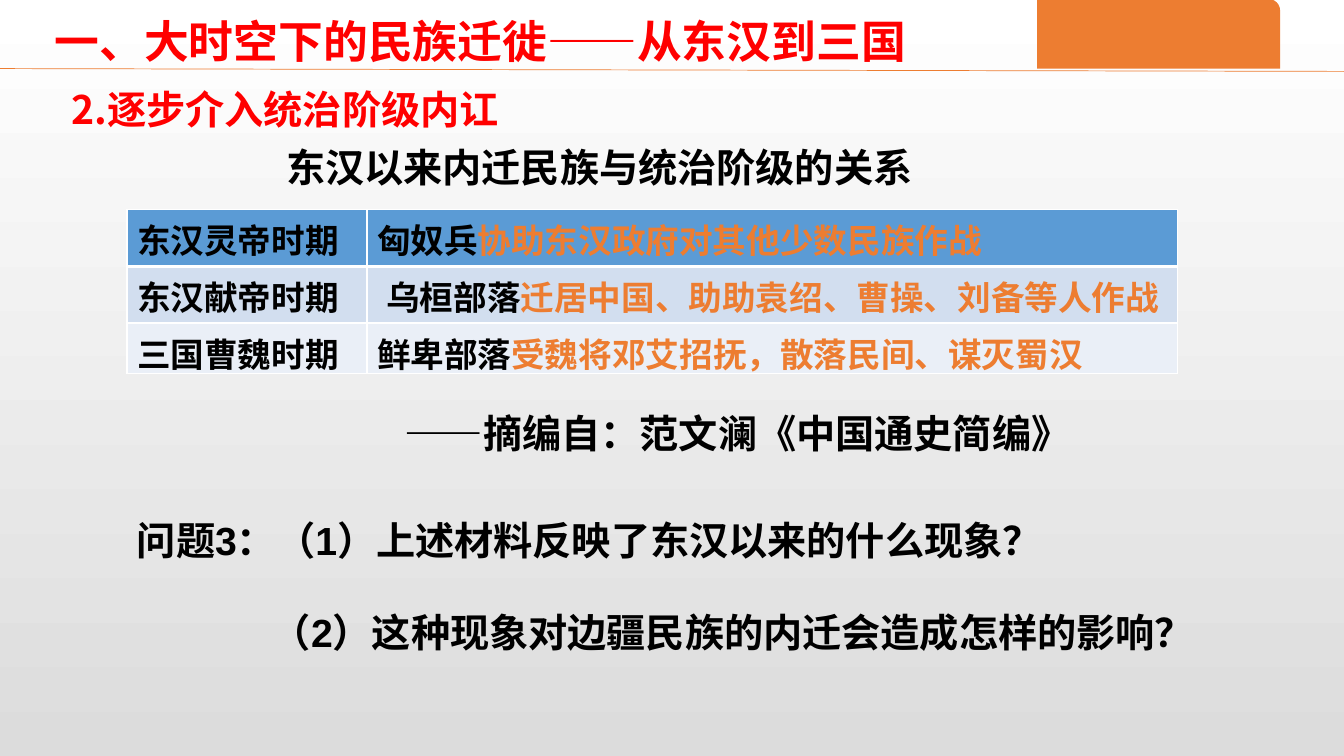
from dataclasses import dataclass

from lxml.etree import SubElement
from pptx import Presentation
from pptx.dml.color import RGBColor
from pptx.enum.shapes import MSO_CONNECTOR as CONN, MSO_SHAPE as SHAPE
from pptx.enum.text import MSO_ANCHOR as ANCHOR, MSO_AUTO_SIZE as AUTO, PP_ALIGN as ALIGN
from pptx.oxml.ns import qn
from pptx.util import Pt

SANS, CJK = "Arial", "Noto Sans CJK SC"
RED, BLACK, ORANGE, WHITE = "FF0000", "000000", "ED7D31", "FFFFFF"


@dataclass
class Label:
    text: str
    left: float
    top: float
    width: float
    height: float = 41
    size: float = 28
    color: str = BLACK
    font: str = SANS
    indent: float = 0
    wrap: bool = True


@dataclass
class Period:
    name: str
    people: str
    deed: str
    fill: str
    height: float
    bottom_line: float = 1
    indent: float = 0


TITLE = Label("一、大时空下的民族迁徙——从东汉到三国", 31.7, 6.5, 659.5, 46, 32, RED)
LABELS = [
    Label("2.逐步介入统治阶级内讧", 43.9, 57.6, 483.8, color=RED, font=CJK),
    Label("问题3：（1）上述材料反映了东汉以来的什么现象？", 90.7, 365, 779),
    Label("（2）这种现象对边疆民族的内迁会造成怎样的影响？", 171.4, 431.3, 689.8,
          indent=15.6, wrap=False),
    Label("东汉以来内迁民族与统治阶级的关系", 197.3, 98.6, 537.1),
    Label("——摘编自：范文澜《中国通史简编》", 282.2, 288.7, 530.6),
]
PERIODS = [
    Period("东汉灵帝时期", "匈奴兵", "协助东汉政府对其他少数民族作战", "5B9BD5", 40.5, 3),
    Period("东汉献帝时期", "乌桓部落", "迁居中国、助助袁绍、曹操、刘备等人作战", "D2DEEF", 40.5,
           indent=6.7),
    Period("三国曹魏时期", "鲜卑部落", "受魏将邓艾招抚，散落民间、谋灭蜀汉", "EAEFF7", 36),
]


def rgb(value: str) -> RGBColor:
    return RGBColor.from_string(value)


def add_run(p, text: str, size: float, color: str, font: str = SANS) -> None:
    r = p.add_run()
    r.text = text
    r.font.size = Pt(size)
    r.font.bold = True
    r.font.name = font
    r.font.color.rgb = rgb(color)
    SubElement(r.font._element, qn("a:ea"), typeface=CJK)


def write_label(sp, label: Label) -> None:
    sp.left, sp.top = Pt(label.left), Pt(label.top)
    sp.width, sp.height = Pt(label.width), Pt(label.height)
    tf = sp.text_frame
    tf.word_wrap = label.wrap
    tf.auto_size = AUTO.SHAPE_TO_FIT_TEXT
    tf.vertical_anchor = ANCHOR.TOP
    tf.margin_left = Pt(7.2 + label.indent)
    p = tf.paragraphs[0]
    p.alignment = ALIGN.LEFT
    add_run(p, label.text, label.size, label.color, label.font)


def style_cell(cell, fill: str, top: float, bottom: float) -> None:
    """Set borders first, as the schema wants them before the fill."""
    tc_pr = cell._tc.get_or_add_tcPr()
    for side, width in (("L", 1), ("R", 1), ("T", top), ("B", bottom)):
        ln = SubElement(tc_pr, qn(f"a:ln{side}"), w=str(Pt(width)))
        SubElement(SubElement(ln, qn("a:solidFill")), qn("a:srgbClr"), val=WHITE)
    cell.fill.solid()
    cell.fill.fore_color.rgb = rgb(fill)
    cell.margin_bottom = Pt(0)


def add_periods(s) -> None:
    height = sum(period.height for period in PERIODS)
    table = s.shapes.add_table(len(PERIODS), 2, Pt(90.7), Pt(149.8),
                               Pt(750.3), Pt(height)).table
    for column, width in zip(table.columns, (171.4, 578.9)):
        column.width = Pt(width)
    top_line = 1
    for row, period in zip(table.rows, PERIODS):
        row.height = Pt(period.height)
        name, story = row.cells
        for cell in (name, story):
            style_cell(cell, period.fill, top_line, period.bottom_line)
        top_line = period.bottom_line
        add_run(name.text_frame.paragraphs[0], period.name, 24, BLACK)
        story.margin_left = Pt(7.2 + period.indent)
        p = story.text_frame.paragraphs[0]
        add_run(p, period.people, 24, BLACK)
        add_run(p, period.deed, 24, ORANGE)


def add_header(s) -> None:
    rule = s.shapes.add_connector(CONN.STRAIGHT, Pt(0), Pt(49), Pt(960), Pt(51))
    rule.line.color.rgb = rgb(ORANGE)
    rule.line.width = Pt(0.5)
    SubElement(rule._element.spPr, qn("a:effectLst"))
    tab = s.shapes.add_shape(SHAPE.ROUND_1_RECTANGLE, Pt(740.9), Pt(-0.7),
                             Pt(173.5), Pt(49.7))
    tab.shadow.inherit = False
    tab.fill.solid()
    tab.fill.fore_color.rgb = rgb(ORANGE)
    tab.line.fill.background()


def paint_background(s) -> None:
    fill = s.background.fill
    fill.gradient()
    fill.gradient_angle = 270
    for stop, position, color in zip(fill.gradient_stops, (0, 1), (WHITE, "DCDCDC")):
        stop.position = position
        stop.color.rgb = rgb(color)


def main() -> None:
    prs = Presentation()
    prs.slide_width, prs.slide_height = Pt(960), Pt(540)
    s = prs.slides.add_slide(prs.slide_layouts[5])
    paint_background(s)
    add_header(s)
    write_label(s.shapes.title, TITLE)
    add_periods(s)
    for label in LABELS:
        write_label(s.shapes.add_textbox(0, 0, 0, 0), label)
    prs.save("out.pptx")


if __name__ == "__main__":
    main()
